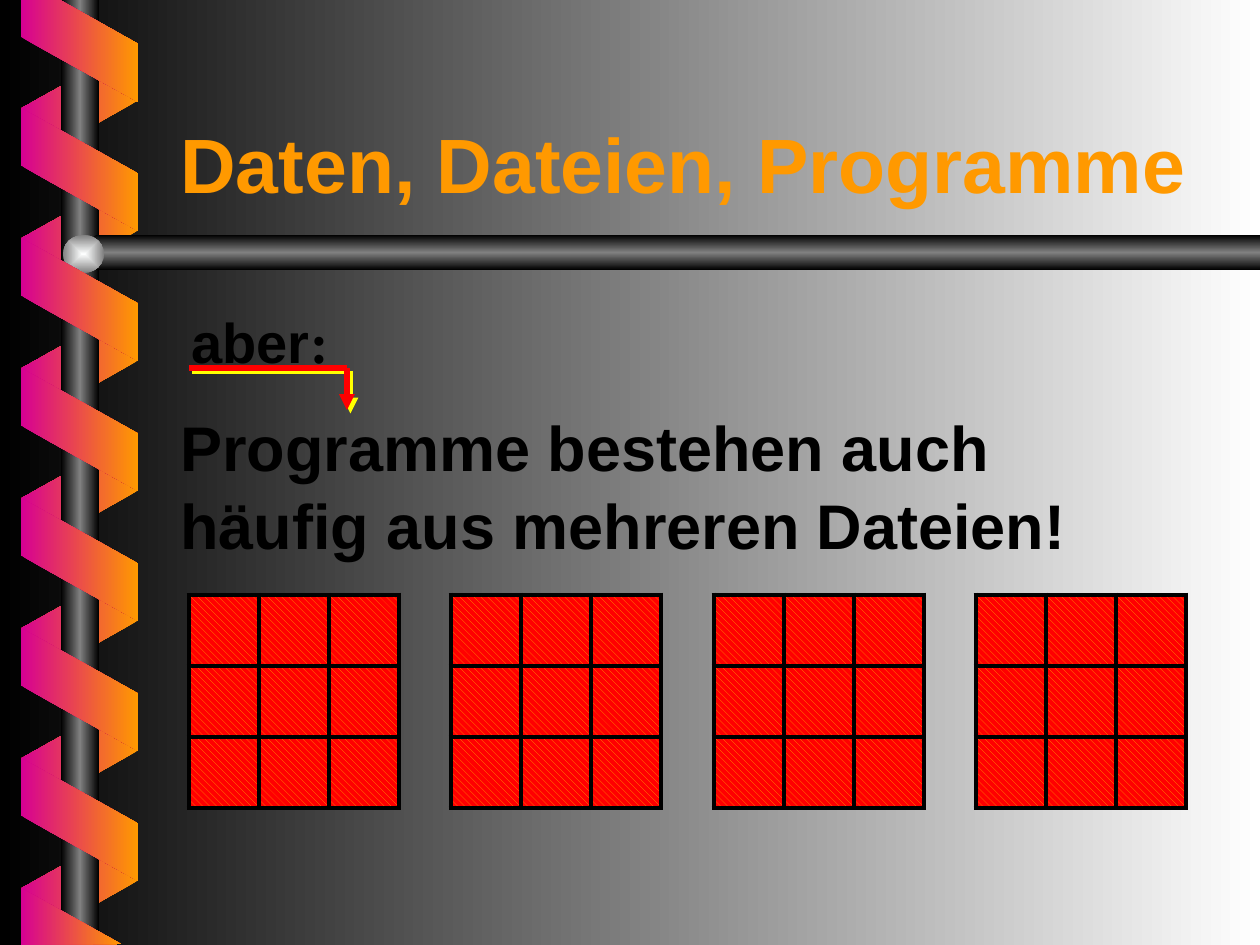
from pptx import Presentation
from pptx.dml.color import RGBColor as RGB
from pptx.enum.dml import MSO_PATTERN as PATTERN
from pptx.enum.shapes import MSO_CONNECTOR as CONN, MSO_SHAPE as SHAPE
from pptx.enum.text import MSO_ANCHOR as ANCHOR
from pptx.oxml import parse_xml
from pptx.oxml.ns import nsdecls, qn
from pptx.util import Pt

PX = 914400 / 126
COLORS = {"black": "000000", "gray": "808080", "white": "FFFFFF", "pearl": "FEFFFF",
          "orange": "FF9900", "magenta": "D60093", "red": "FF0000", "yellow": "FFFF00"}


def emu(*lengths):
    return [round(v * PX) for v in lengths]


def rgb(name):
    return RGB.from_string(COLORS[name])


def xml(tag, attrs="", body=""):
    return parse_xml(f'<a:{tag} {nsdecls("a")} {attrs}>{body}</a:{tag}>')


def clr(name):
    return f'<a:srgbClr val="{COLORS[name]}"/>'


def add_run(p, text, size=32, font="Arial", color="black"):
    r = p.add_run()
    r.text = text
    r.font.size, r.font.name, r.font.bold = Pt(size), font, True
    r.font.color.rgb = rgb(color)


class Deck:
    """Holds the presentation, its current slide and the shared style."""

    def __init__(self, width, height):
        self.prs = Presentation()
        self.prs.slide_width, self.prs.slide_height = emu(width, height)
        self.s = self.prs.slides.add_slide(self.prs.slide_layouts[6])

    def gradient(self, fill, parent, colors, angle=0, radial=False):
        fill.solid()
        step = 100000 // (len(colors) - 1)
        stops = "".join(f'<a:gs pos="{i * step}">{clr(c)}</a:gs>' for i, c in enumerate(colors))
        center = 'l="50000" t="50000" r="50000" b="50000"'
        shade = (f'<a:path path="shape"><a:fillToRect {center}/></a:path>' if radial
                 else f'<a:lin ang="{angle * 60000}" scaled="1"/>')
        grad = xml("gradFill", 'rotWithShape="0"', f"<a:gsLst>{stops}</a:gsLst>{shade}")
        parent.replace(parent.find(qn("a:solidFill")), grad)

    def background(self, *colors):
        self.gradient(self.s.background.fill, self.s._element.cSld.bg.bgPr, colors)

    def paint(self, sp, colors, **shade):
        self.gradient(sp.fill, sp._element.spPr, colors, **shade)
        sp.line.fill.background()
        sp.shadow.inherit = False

    def shape(self, kind, box, colors, adj=None, rot=0, flip=False, **shade):
        sp = self.s.shapes.add_shape(kind, *emu(*box))
        if adj is not None:
            sp.adjustments[0] = adj
        sp.rotation = rot
        if flip:
            sp._element.spPr.get_or_add_xfrm().set("flipH", "1")
        self.paint(sp, colors, **shade)

    def outline(self, points, colors):
        fb = self.s.shapes.build_freeform(*points[0], scale=PX)
        fb.add_line_segments(points[1:], close=True)
        self.paint(fb.convert_to_shape(), colors)

    def text(self, box, lines, wrap=False, anchor=ANCHOR.TOP, spacing=1.0):
        tf = self.s.shapes.add_textbox(*emu(*box)).text_frame
        tf.word_wrap, tf.vertical_anchor = wrap, anchor
        for i, runs in enumerate(lines):
            p = tf.add_paragraph() if i else tf.paragraphs[0]
            p.line_spacing = spacing
            for text, fmt in runs:
                add_run(p, text, **fmt)

    def grid(self, x, y, cols, rows, col_width, row_height):
        box = emu(x, y, cols * col_width, rows * row_height)
        table = self.s.shapes.add_table(rows, cols, *box).table
        for cell in table.iter_cells():
            tc_pr = cell._tc.get_or_add_tcPr()
            for side in "LRTB":
                tc_pr.append(xml(f"ln{side}", f'w="{Pt(3)}"',
                                 f'<a:solidFill>{clr("black")}</a:solidFill>'))
            cell.fill.patterned()
            cell.fill.pattern = PATTERN.WIDE_DOWNWARD_DIAGONAL
            cell.fill.fore_color.rgb = rgb("orange")
            cell.fill.back_color.rgb = rgb("red")

    def line(self, start, end, arrow=False):
        ln = self.s.shapes.add_connector(CONN.STRAIGHT, *emu(*start, *end))
        ln.line.color.rgb, ln.line.width = rgb("red"), Pt(3)
        if arrow:
            ln.line._get_or_add_ln().append(xml("tailEnd", 'type="triangle"'))
        shadow = (f'<a:outerShdw dist="{Pt(2.8)}" dir="2700000" algn="ctr" rotWithShape="0">'
                  f'{clr("yellow")}</a:outerShdw>')
        ln._element.spPr.append(xml("effectLst", body=shadow))


def main():
    deck = Deck(1260, 945)
    deck.background("black", "white")

    ribbon = ["magenta", "orange"]
    tube = ["black", "gray", "black"]
    pitch = 130
    for i in range(7):
        deck.shape(SHAPE.PARALLELOGRAM, (18, 46 + i * pitch, 123, 117), ribbon[::-1],
                   adj=0.56, rot=90, flip=True)
    deck.shape(SHAPE.RECTANGLE, (61, 0, 38, 945), tube)
    deck.shape(SHAPE.PENTAGON, (76, 235, 1184, 35), tube, adj=0.59, flip=True, angle=90)
    deck.shape(SHAPE.OVAL, (63, 235, 41, 38), ["pearl", "gray"], radial=True)
    for i in range(6):
        deck.shape(SHAPE.PARALLELOGRAM, (18, 111 + i * pitch, 123, 117), ribbon,
                   adj=0.56, rot=270)
    deck.outline([(21, 0), (21, 37), (138, 102), (138, 44), (60, 0)], ribbon)
    deck.outline([(121, 944), (21, 888), (21, 945)], ribbon)

    heading, body = {"size": 44, "color": "orange"}, {"size": 36}
    deck.text((168, 58, 1071, 157), [[("Daten, Dateien, Programme", heading)]],
              wrap=True, anchor=ANCHOR.BOTTOM)
    deck.text((168, 399, 911, 164), [[("Programme bestehen auch", body)],
                                     [("häufig aus mehreren Dateien!", body)]], spacing=1.04)
    deck.text((179, 299, 163, 79), [[("aber", {}), (":", {"font": "Times New Roman"})]],
              spacing=1.04)

    for i in range(4):
        deck.grid(189 + i * 525 // 2, 595, 3, 3, 70, 71)
    corner = (347, 368)
    deck.line((189, 368), corner)
    deck.line(corner, (347, 410), arrow=True)
    deck.prs.save("out.pptx")


if __name__ == "__main__":
    main()
